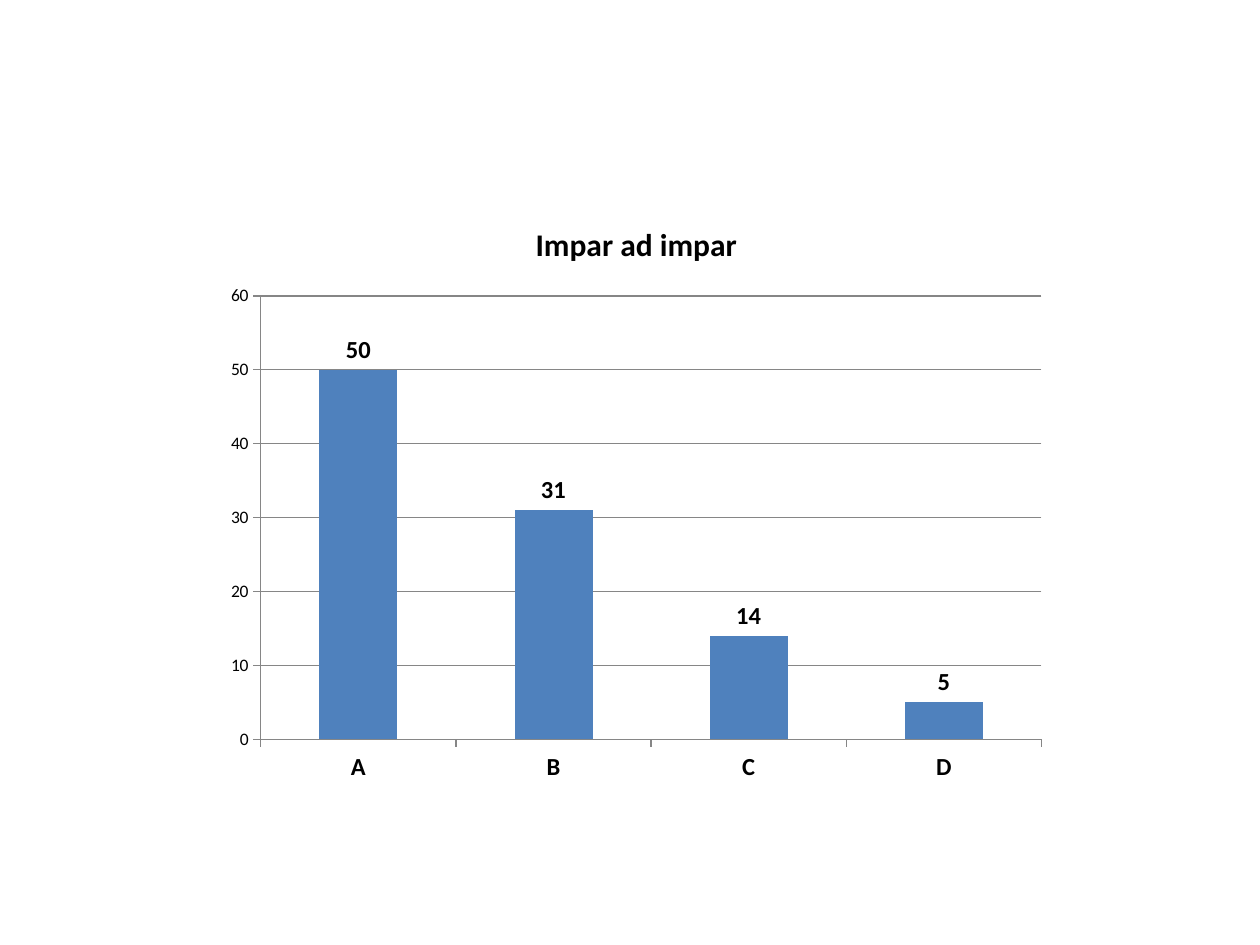
import pptx
import pptx.chart.data
import pptx.dml.color
import pptx.enum.chart
import pptx.util

WIDTH = pptx.util.Inches(10)
HEIGHT = pptx.util.Inches(7.5)
TITLE = "Impar ad impar"
VALUES = {"A": 50, "B": 31, "C": 14, "D": 5}


def color(hex_string):
    return pptx.dml.color.RGBColor.from_string(hex_string)


def set_font(font, size, bold=False):
    font.name = "Calibri"
    font.size = pptx.util.Pt(size)
    font.bold = bold
    font.color.rgb = color("000000")


def set_line(line):
    line.color.rgb = color("868686")
    line.width = pptx.util.Pt(0.75)


def style_axis(axis, size, bold=False):
    axis.major_tick_mark = pptx.enum.chart.XL_TICK_MARK.OUTSIDE
    axis.minor_tick_mark = pptx.enum.chart.XL_TICK_MARK.NONE
    set_font(axis.tick_labels.font, size, bold)
    set_line(axis.format.line)


def add_title(chart, text):
    chart.has_title = True
    frame = chart.chart_title.text_frame
    frame.text = text
    set_font(frame.paragraphs[0].runs[0].font, 18, True)
    chart.chart_title.include_in_layout = False


def style_columns(plot):
    plot.gap_width = 150
    plot.vary_by_categories = False
    fill = plot.series[0].format.fill
    fill.solid()
    fill.fore_color.rgb = color("4F81BD")
    plot.has_data_labels = True
    labels = plot.data_labels
    labels.show_value = True
    labels.position = pptx.enum.chart.XL_LABEL_POSITION.OUTSIDE_END
    set_font(labels.font, 14, True)


def add_column_chart(page, left, top, width, height):
    data = pptx.chart.data.CategoryChartData()
    data.categories = list(VALUES)
    data.add_series(TITLE, list(VALUES.values()))
    chart = page.shapes.add_chart(
        pptx.enum.chart.XL_CHART_TYPE.COLUMN_CLUSTERED,
        int(WIDTH * left), int(HEIGHT * top),
        int(WIDTH * width), int(HEIGHT * height), data,
    ).chart
    set_font(chart.font, 10)
    chart.has_legend = False
    add_title(chart, TITLE)
    style_axis(chart.category_axis, 14, True)
    style_axis(chart.value_axis, 10)
    chart.value_axis.minimum_scale = 0
    chart.value_axis.maximum_scale = 60
    chart.value_axis.major_unit = 10
    chart.value_axis.has_major_gridlines = True
    set_line(chart.value_axis.major_gridlines.format.line)
    style_columns(chart.plots[0])


def main():
    deck = pptx.Presentation()
    deck.slide_width = WIDTH
    deck.slide_height = HEIGHT
    page = deck.slides.add_slide(deck.slide_layouts[6])
    add_column_chart(page, 0.17, 0.21, 0.67, 0.63)
    deck.save("out.pptx")


if __name__ == "__main__":
    main()
